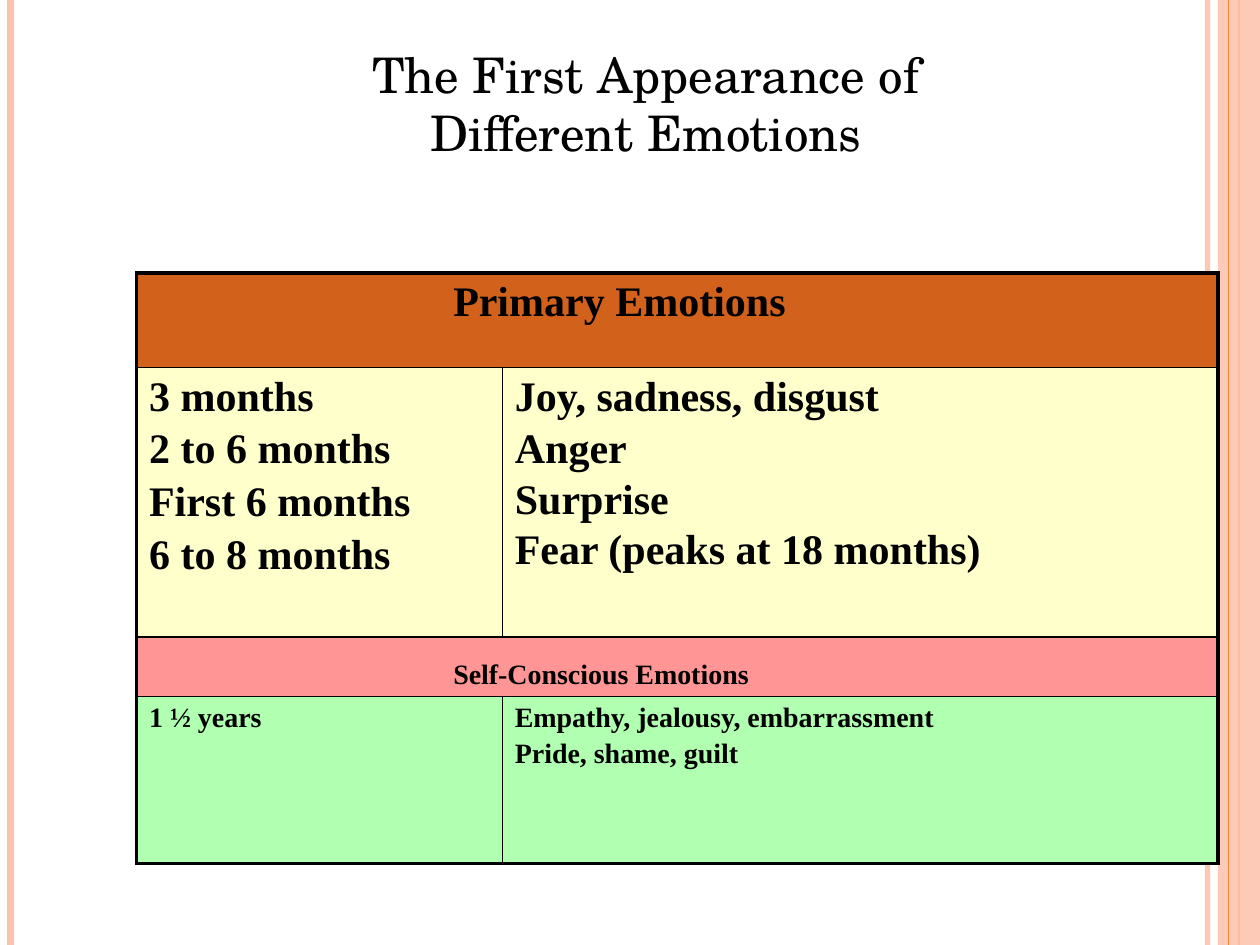
from lxml.etree import SubElement
from pptx import Presentation
from pptx.dml.color import RGBColor
from pptx.enum.shapes import MSO_CONNECTOR, MSO_SHAPE
from pptx.enum.text import MSO_ANCHOR, PP_ALIGN
from pptx.oxml.ns import qn
from pptx.util import Pt

BLACK = RGBColor(0x00, 0x00, 0x00)
PEACH = RGBColor(0xFE, 0xC3, 0xAE)
ORANGE = RGBColor(0xFE, 0x86, 0x37)
RUST = RGBColor(0xD2, 0x61, 0x1C)
CREAM = RGBColor(0xFF, 0xFF, 0xCC)
PINK = RGBColor(0xFF, 0x95, 0x95)
MINT = RGBColor(0xB1, 0xFF, 0xB1)

WIDTH, HEIGHT = 720, 540
HEADING_INDENT = 181
THICK, THIN = 2.25, 1


def write(frame, text, size, font, bold=False, align=PP_ALIGN.LEFT,
          before=0, spacing=()):
    """Fill a frame, one paragraph per line; spacing maps line index to factor."""
    spacing = dict(spacing)
    frame.word_wrap = True
    for index, line in enumerate(text.split("\n")):
        paragraph = frame.add_paragraph() if index else frame.paragraphs[0]
        paragraph.alignment = align
        paragraph.space_before = Pt(before)
        paragraph.line_spacing = spacing.get(index, 1.0)
        run = paragraph.add_run()
        run.text = line
        run.font.size = Pt(size)
        run.font.name = font
        run.font.bold = bold
        run.font.color.rgb = BLACK


def set_opacity(element, percent):
    for color in element.spPr.iter(qn("a:srgbClr")):
        SubElement(color, qn("a:alpha"), val=str(percent * 1000))


def set_border(cell, side, weight):
    line = SubElement(cell._tc.get_or_add_tcPr(), qn(f"a:ln{side}"),
                      w=str(Pt(weight)), cap="flat", cmpd="sng")
    fill = SubElement(line, qn("a:solidFill"))
    SubElement(fill, qn("a:srgbClr"), val=str(BLACK))
    SubElement(line, qn("a:prstDash"), val="solid")


class SlideBuilder:
    title_font = "TeX Gyre Schola"
    table_font = "Times New Roman"

    def __init__(self, slide):
        self.slide = slide

    def stripe(self, x, color, weight, opacity=100):
        stripe = self.slide.shapes.add_connector(
            MSO_CONNECTOR.STRAIGHT, Pt(x), Pt(0), Pt(x), Pt(HEIGHT))
        stripe.line.color.rgb = color
        stripe.line.width = Pt(weight)
        SubElement(stripe.element.spPr, qn("a:effectLst"))
        if opacity < 100:
            set_opacity(stripe.element, opacity)

    def band(self, left, width, color, opacity):
        band = self.slide.shapes.add_shape(
            MSO_SHAPE.RECTANGLE, Pt(left), Pt(0), Pt(width), Pt(HEIGHT))
        band.shadow.inherit = False
        band.fill.solid()
        band.fill.fore_color.rgb = color
        band.line.fill.background()
        set_opacity(band.element, opacity)

    def title(self, text, left, top, width, height):
        title = self.slide.shapes.add_textbox(
            Pt(left), Pt(top), Pt(width), Pt(height))
        write(title.text_frame, text, 28, self.title_font,
              align=PP_ALIGN.CENTER)

    def table(self, left, top, widths, heights):
        table = self.slide.shapes.add_table(
            len(heights), len(widths), Pt(left), Pt(top),
            Pt(sum(widths)), Pt(sum(heights))).table
        table.first_row = table.horz_banding = False
        for column, width in zip(table.columns, widths):
            column.width = Pt(width)
        for row, height in zip(table.rows, heights):
            row.height = Pt(height)
        return table

    def table_row(self, table, index, texts, size, color, spacing=()):
        """One text makes a heading across the row; two fill its cells."""
        cells = list(table.rows[index].cells)
        heading = len(texts) == 1
        last_row = len(table.rows) - 1
        for column, cell in enumerate(cells):
            set_border(cell, "L", THIN if column else THICK)
            set_border(cell, "R", THICK if column or heading else THIN)
            set_border(cell, "T", THIN if index else THICK)
            set_border(cell, "B", THICK if index == last_row else THIN)
            cell.fill.solid()
            cell.fill.fore_color.rgb = color
        if heading:
            cells[0].merge(cells[-1])
            cells[0].margin_left = Pt(HEADING_INDENT)
        for cell, text in zip(cells, texts):
            write(cell.text_frame, text, size, self.table_font, bold=True,
                  before=0.15 * size, spacing=spacing)


def main():
    deck = Presentation()
    deck.slide_width, deck.slide_height = Pt(WIDTH), Pt(HEIGHT)
    builder = SlideBuilder(deck.slides.add_slide(deck.slide_layouts[6]))

    # Side decoration
    builder.stripe(690, PEACH, 3, opacity=93)
    builder.stripe(6, PEACH, 4.5)
    builder.stripe(708, ORANGE, 1.5)
    builder.band(696, 24, PEACH, opacity=87)
    builder.stripe(702, ORANGE, 0.75)

    # Emotions by age
    emotions = builder.table(78, 156, widths=(209, 409),
                             heights=(54, 154, 34, 95.5))
    builder.table_row(emotions, 0, ["Primary Emotions"], 24, RUST)
    builder.table_row(
        emotions, 1,
        ["3 months\n2 to 6 months\nFirst 6 months\n6 to 8 months",
         "Joy, sadness, disgust\nAnger\nSurprise\nFear (peaks at 18 months)"],
        24, CREAM)
    for surprise_or_fear in emotions.cell(1, 1).text_frame.paragraphs[2:]:
        surprise_or_fear.line_spacing = 0.95
    builder.table_row(emotions, 2, ["Self-Conscious Emotions"], 16, PINK)
    emotions.cell(2, 0).vertical_anchor = MSO_ANCHOR.BOTTOM
    builder.table_row(
        emotions, 3,
        ["1 ½ years", "Empathy, jealousy, embarrassment\nPride, shame, guilt"],
        16, MINT)

    # Title
    builder.title("The First Appearance of Different Emotions",
                  162, 21.6, 414, 74)

    deck.save("out.pptx")


if __name__ == "__main__":
    main()
